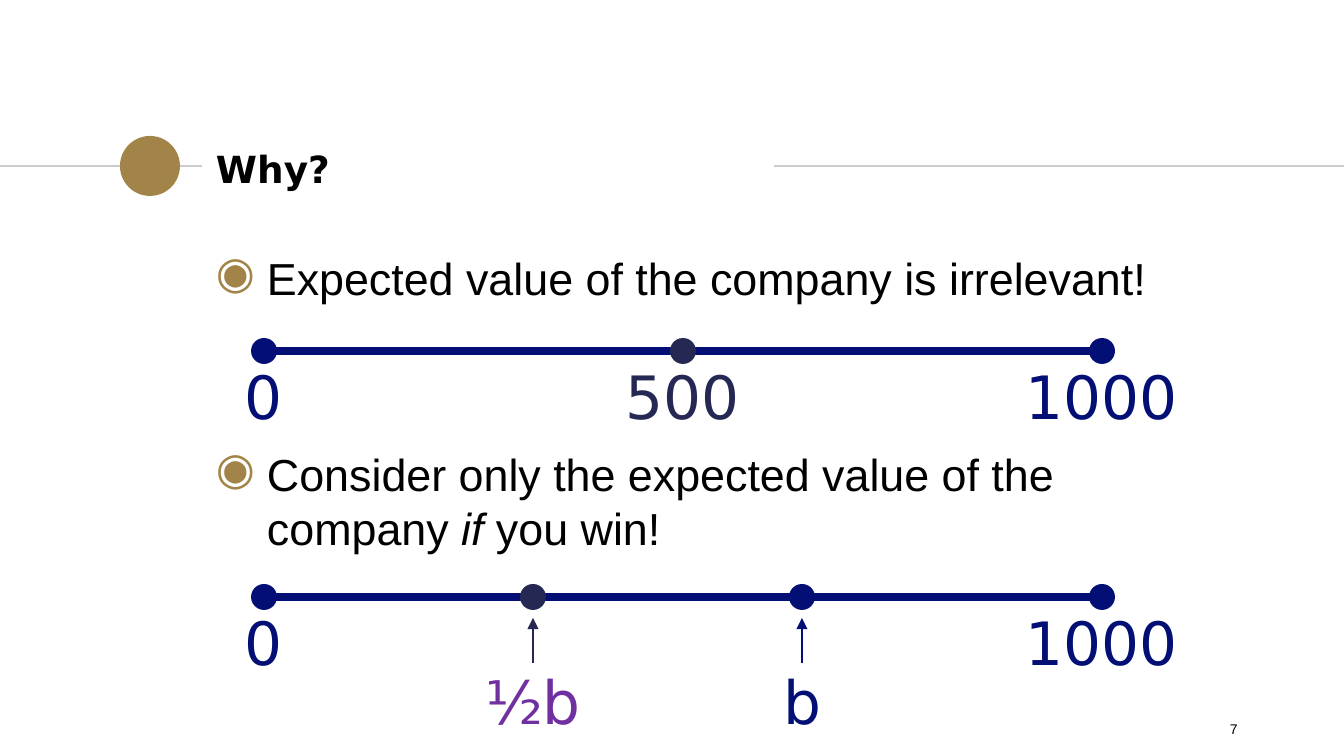
from lxml import etree
from pptx import Presentation
from pptx import util as u
from pptx.dml.color import RGBColor
from pptx.enum import shapes, text
from pptx.oxml.ns import qn

# Content
TITLE = "Why?"
BULLETS = [
    [("Expected value of the company is irrelevant!", False)],
    [("Consider only the expected value of the company ", False),
     ("if", True), (" you win!", False)],
]
PAGE = "7"
COLORS = {"black": "000000", "gold": "A28448", "rule": "CCCCCC",
          "navy": "040F76", "slate": "242852", "purple": "7030A0"}

# Number lines: marks are (label, centre, label width, dot colour, label colour, has arrow)
ZERO = ("0", 264, 121, "navy", "navy", False)
THOUSAND = ("1000", 1102, 208, "navy", "navy", False)
NUMBER_LINES = [
    (351, [ZERO, THOUSAND, ("500", 683, 208, "slate", "slate", False)]),
    (597, [ZERO, THOUSAND, ("½b", 533, 208, "slate", "purple", True),
           ("b", 802, 102, "navy", "navy", True)]),
]
LINE_LEFT, LINE_RIGHT = 257, 1107
DOT = 26
LABEL_HEIGHT, LABEL_GAP, ARROW_LABEL_GAP = 83, 2, 61
ARROW_TOP, ARROW_BOTTOM = 21, 66

prs = Presentation()


def px(n):
    return round(n * 914400 / 134.4)


def color(name):
    return RGBColor.from_string(COLORS[name])


def write(paragraph, words, size, font="Arial", ink="black", bold=False,
          italic=False, align=None):
    if align is not None:
        paragraph.alignment = align
    run = paragraph.add_run()
    run.text = words
    run.font.size = u.Pt(size)
    run.font.name = font
    run.font.bold = bold
    run.font.italic = italic
    run.font.color.rgb = color(ink)


def text_frame(left, top, width, height, anchor=text.MSO_ANCHOR.TOP):
    frame = slide.shapes.add_textbox(px(left), px(top), px(width), px(height)).text_frame
    frame.word_wrap = True
    frame.vertical_anchor = anchor
    return frame


def set_margins(frame, margin):
    frame.margin_left = frame.margin_right = px(margin)
    frame.margin_top = frame.margin_bottom = px(margin)


def add_bullet(paragraph):
    props = paragraph._p.get_or_add_pPr()
    props.set("marL", str(px(51)))
    props.set("indent", str(-px(51)))
    bullet_color = etree.SubElement(props, qn("a:buClr"))
    etree.SubElement(bullet_color, qn("a:srgbClr"), val=COLORS["gold"])
    etree.SubElement(props, qn("a:buChar"), char="◉")


def draw_line(x1, y1, x2, y2, ink, width, arrow=False):
    line = slide.shapes.add_connector(
        shapes.MSO_CONNECTOR.STRAIGHT, px(x1), px(y1), px(x2), px(y2))
    line.line.color.rgb = color(ink)
    line.line.width = u.Pt(width)
    if arrow:
        etree.SubElement(line.line._get_or_add_ln(), qn("a:tailEnd"), type="triangle")
    etree.SubElement(line._element.spPr, qn("a:effectLst"))


def draw_dot(x, y, size, ink):
    dot = slide.shapes.add_shape(shapes.MSO_SHAPE.OVAL, px(x - size / 2),
                                 px(y - size / 2), px(size), px(size))
    dot.shadow.inherit = False
    dot.fill.solid()
    dot.fill.fore_color.rgb = color(ink)
    dot.line.fill.background()


prs.slide_width, prs.slide_height = px(1344), px(756)
slide = prs.slides.add_slide(prs.slide_layouts[5])

# Title between two rules, with the gold dot
title = slide.shapes.title
title.left, title.top, title.width, title.height = px(203), px(136), px(570), px(65)
title.text_frame.vertical_anchor = text.MSO_ANCHOR.MIDDLE
set_margins(title.text_frame, 13)
write(title.text_frame.paragraphs[0], TITLE, 20, font="DejaVu Sans", bold=True,
      align=text.PP_ALIGN.LEFT)
for start, end in [(0, 202), (774, 1344)]:
    draw_line(start, 166, end, 166, "rule", 0.75)
draw_dot(150, 166, 60, "gold")

# Bullets, spaced to leave room for the first number line
body = text_frame(203, 238, 1001, 457)
set_margins(body, 13)
for i, runs in enumerate(BULLETS):
    paragraph = body.add_paragraph() if i else body.paragraphs[0]
    if i:
        paragraph.space_before = u.Pt(76)
    add_bullet(paragraph)
    for words, italic in runs:
        write(paragraph, words, 24, italic=italic)

# Number lines
for y, marks in NUMBER_LINES:
    draw_line(LINE_LEFT, y, LINE_RIGHT, y, "navy", 4.5)
    for label, x, width, dot_ink, label_ink, has_arrow in marks:
        draw_dot(x, y, DOT, dot_ink)
        if has_arrow:
            draw_line(x, y + ARROW_BOTTOM, x, y + ARROW_TOP, dot_ink, 1.5, arrow=True)
        top = y + (ARROW_LABEL_GAP if has_arrow else LABEL_GAP)
        frame = text_frame(x - width / 2, top, width, LABEL_HEIGHT)
        write(frame.paragraphs[0], label, 32, font="DejaVu Sans", ink=label_ink,
              align=text.PP_ALIGN.CENTER)

# Page number
page = text_frame(949, 709, 302, 40, anchor=text.MSO_ANCHOR.MIDDLE)
write(page.paragraphs[0], PAGE, 7.5, align=text.PP_ALIGN.RIGHT)

prs.save("out.pptx")
